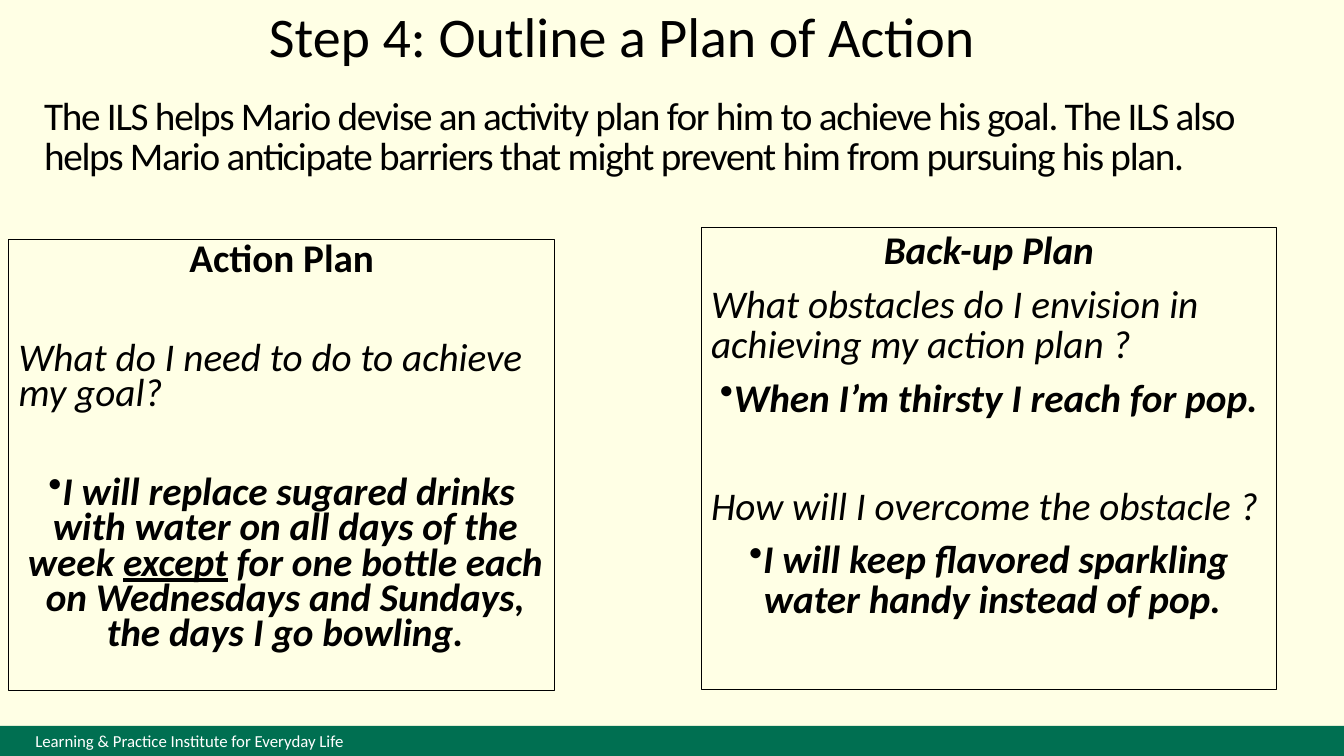
from dataclasses import dataclass

from lxml import etree
from pptx import Presentation
from pptx import util as u
from pptx.dml import color
from pptx.enum import shapes, text
from pptx.oxml import ns


@dataclass(frozen=True)
class Theme:
    font: str = "Calibri"
    page: str = "FFFFE5"
    band: str = "006F51"
    ink: str = "000000"
    pale: str = "FFFFFF"
    head: int = 40
    body: int = 28
    foot: int = 12
    gap: float = 9.8


THEME = Theme()
MID = text.PP_ALIGN.CENTER


def paint(fill, tone):
    fill.solid()
    fill.fore_color.rgb = color.RGBColor.from_string(tone)


def style(para, size, tone=THEME.ink, bold=False, slant=False):
    font = para.font
    font.name, font.size = THEME.font, u.Pt(size)
    font.bold, font.italic = bold, slant
    font.color.rgb = color.RGBColor.from_string(tone)


def add_label(slide, area, words, size, wrap=True):
    frame = slide.shapes.add_textbox(*map(u.Cm, area)).text_frame
    frame.word_wrap = wrap
    para = frame.paragraphs[0]
    para.text = words
    style(para, size)
    return frame


def add_box(slide, area):
    box = slide.shapes.add_shape(shapes.MSO_SHAPE.RECTANGLE, *map(u.Cm, area))
    box.shadow.inherit = False
    box.text_frame.word_wrap = True
    return box


def add_bullet(para):
    props = para._p.get_or_add_pPr()
    props.set("marL", str(u.Cm(0.18)))
    props.set("indent", str(u.Cm(-0.18)))
    tint = etree.SubElement(props, ns.qn("a:buClr"))
    etree.SubElement(tint, ns.qn("a:srgbClr"), val=THEME.ink)
    etree.SubElement(props, ns.qn("a:buChar"), char="•")


def add_plan(slide, area, pitch, slant, items):
    box = add_box(slide, area)
    box.fill.background()
    paint(box.line.fill, THEME.ink)
    box.line.width = u.Pt(0.75)
    frame = box.text_frame
    frame.vertical_anchor = text.MSO_ANCHOR.TOP
    skip = THEME.body * 1.22 * pitch + THEME.gap
    for index, (kind, apart, parts) in enumerate(items):
        para = frame.paragraphs[0] if index == 0 else frame.add_paragraph()
        ask = kind == "ask"
        para.alignment = text.PP_ALIGN.LEFT if ask else MID
        para.line_spacing = pitch
        para.space_before = u.Pt(round(THEME.gap + skip * apart, 1))
        style(para, THEME.body, bold=not ask, slant=slant or kind != "head")
        if kind == "reply":
            add_bullet(para)
        for order, words in enumerate(parts):
            run = para.add_run()
            run.text = words
            if order % 2:
                run.font.underline = True


def add_foot(slide):
    band = add_box(slide, (0, 18.29, 33.87, 0.76))
    paint(band.fill, THEME.band)
    band.line.fill.background()
    para = band.text_frame.paragraphs[0]
    para.text = "Learning & Practice Institute for Everyday Life"
    para.alignment = text.PP_ALIGN.LEFT
    para._p.get_or_add_pPr().set("marL", str(u.Cm(0.64)))
    style(para, THEME.foot, THEME.pale)


def add_intro(slide):
    frame = add_label(
        slide, (0.86, 1.68, 30.91, 3.6),
        "The ILS helps Mario devise an activity plan for him to achieve his "
        "goal. The ILS also helps Mario anticipate barriers that might "
        "prevent him from pursuing his plan.", THEME.body)
    frame.vertical_anchor = text.MSO_ANCHOR.MIDDLE
    para = frame.paragraphs[0]
    para.line_spacing = 0.85
    para.runs[0].font._element.set("spc", "-90")


def main():
    deck = Presentation()
    deck.slide_width, deck.slide_height = u.Cm(33.87), u.Cm(19.05)
    slide = deck.slides.add_slide(deck.slide_layouts[6])
    paint(slide.background.fill, THEME.page)
    add_foot(slide)
    add_intro(slide)
    add_plan(slide, (0.22, 6.04, 13.76, 11.35), 0.75, False, [
        ("head", 0, ["Action Plan"]),
        ("ask", 1, ["What do I need to do to achieve my goal?"]),
        ("reply", 1, [
            "I will replace sugared drinks with water on all days of the week ",
            "except",
            " for one bottle each on Wednesdays and Sundays, "
            "the days I go bowling."]),
    ])
    add_plan(slide, (17.67, 5.74, 14.5, 11.63), 0.85, True, [
        ("head", 0, ["Back-up Plan"]),
        ("ask", 0, ["What obstacles do I envision in achieving my action plan ?"]),
        ("reply", 0, ["When I’m thirsty I reach for pop."]),
        ("ask", 1, ["How will I overcome the obstacle ?"]),
        ("reply", 0, ["I will keep flavored sparkling water handy instead of pop."]),
    ])
    add_label(slide, (6.53, -0.08, 18.9, 1.96),
              "Step 4: Outline a Plan of Action", THEME.head, wrap=False)
    deck.save("out.pptx")


if __name__ == "__main__":
    main()
